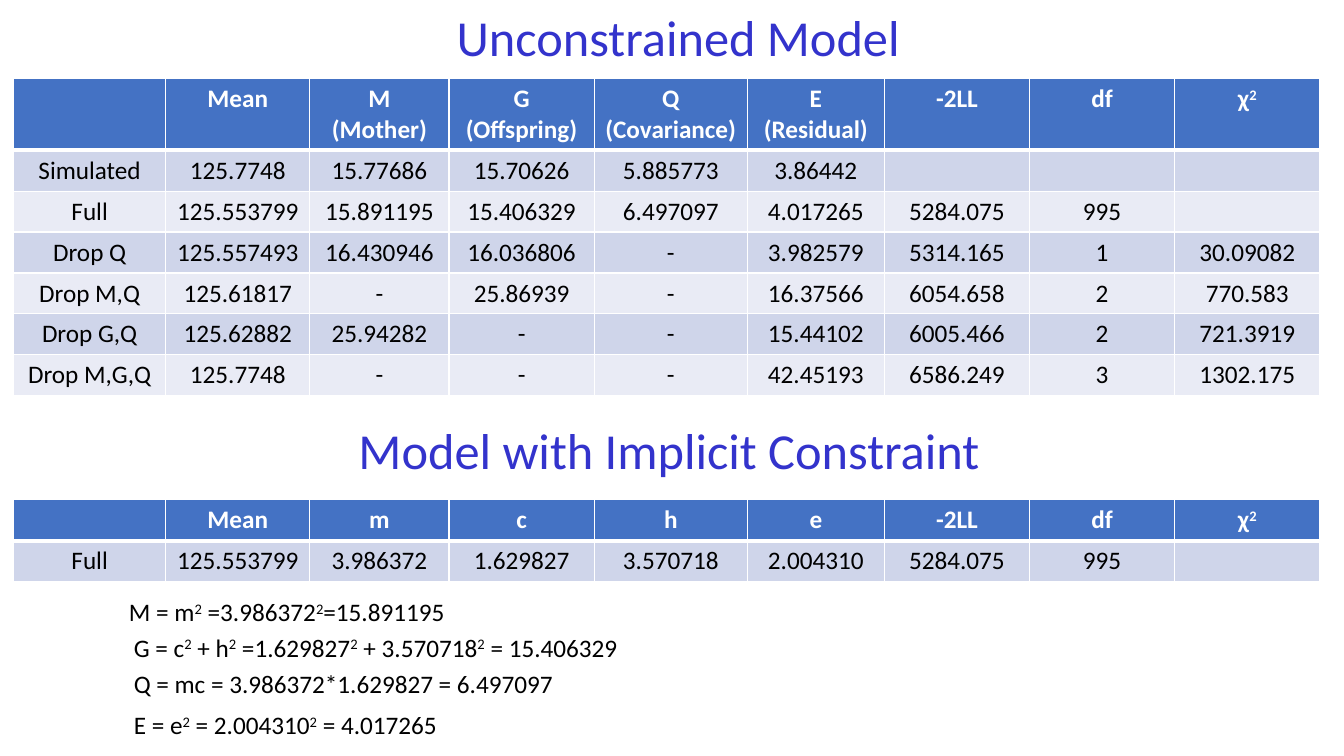
"""Build a slide comparing an unconstrained model with an implicitly constrained one."""
from dataclasses import dataclass

from lxml import etree
from pptx import Presentation
from pptx.dml.color import RGBColor
from pptx.enum.text import MSO_ANCHOR, MSO_AUTO_SIZE, PP_ALIGN
from pptx.oxml.ns import qn
from pptx.util import Pt

LEFT, CENTER = PP_ALIGN.LEFT, PP_ALIGN.CENTER
TOP = MSO_ANCHOR.TOP
NO_FIT = MSO_AUTO_SIZE.NONE
TITLE_ONLY = 5


@dataclass(frozen=True)
class Theme:
    font: str = "Calibri"
    title_size: float = 36
    text_size: float = 18
    title: str = "3333CC"
    text: str = "000000"
    header_text: str = "FFFFFF"
    header_fill: str = "4472C4"
    bands: tuple = ("CFD5EA", "E9EBF5")
    border: str = "FFFFFF"
    thin: float = 1
    thick: float = 3


class Page:
    def __init__(self, deck, theme):
        self.theme = theme
        self.slide = deck.slides.add_slide(deck.slide_layouts[TITLE_ONLY])

    def fill_text(self, frame, text, size, color, align=LEFT, bold=False):
        for index, line in enumerate(text.split("\n")):
            para = frame.add_paragraph() if index else frame.paragraphs[0]
            para.alignment = align
            font = para.font
            font.name, font.size, font.bold = self.theme.font, Pt(size), bold
            font.color.rgb = RGBColor.from_string(color)
            for position, piece in enumerate(line.split("²")):
                if position:
                    power = para.add_run()
                    power.text = "2"
                    power.font._element.set("baseline", "30000")
                if piece:
                    para.add_run().text = piece

    def place(self, box, left, top, width, height, wrap):
        box.left, box.top, box.width, box.height = map(Pt, (left, top, width, height))
        frame = box.text_frame
        frame.word_wrap = wrap
        frame.auto_size = NO_FIT
        frame.vertical_anchor = TOP
        return frame

    def add_box(self):
        return self.slide.shapes.add_textbox(0, 0, 0, 0)

    def heading(self, box, text, left, top, width):
        frame = self.place(box, left, top, width, 51, False)
        self.fill_text(frame, text, self.theme.title_size, self.theme.title)

    def formula(self, text, left, top):
        frame = self.place(self.add_box(), left, top, 602, 29, True)
        self.fill_text(frame, text, self.theme.text_size, self.theme.text)

    def border(self, cell, side, width):
        properties = cell._tc.get_or_add_tcPr()
        line = etree.SubElement(properties, qn(f"a:ln{side}"), w=str(Pt(width)))
        fill = etree.SubElement(line, qn("a:solidFill"))
        etree.SubElement(fill, qn("a:srgbClr"), val=self.theme.border)

    def table(self, rows, left, top, widths, header_height, row_height):
        theme = self.theme
        height = header_height + row_height * (len(rows) - 1)
        table = self.slide.shapes.add_table(
            len(rows), len(widths), Pt(left), Pt(top), Pt(sum(widths)), Pt(height)).table
        for column, width in zip(table.columns, widths):
            column.width = Pt(width)
        for row_index, values in enumerate(rows):
            header = row_index == 0
            table.rows[row_index].height = Pt(header_height if header else row_height)
            fill = theme.header_fill if header else theme.bands[(row_index - 1) % 2]
            color = theme.header_text if header else theme.text
            top_width = theme.thick if row_index == 1 else theme.thin
            bottom_width = theme.thick if header else theme.thin
            sides = {"L": theme.thin, "R": theme.thin, "T": top_width, "B": bottom_width}
            for column_index, value in enumerate(values):
                cell = table.cell(row_index, column_index)
                for side, width in sides.items():
                    self.border(cell, side, width)
                cell.fill.solid()
                cell.fill.fore_color.rgb = RGBColor.from_string(fill)
                self.fill_text(cell.text_frame, value, theme.text_size, color, CENTER, header)


COLUMN_WIDTHS = [108.7, 103, 99.4, 103.7, 109.4, 97.9, 103.7, 103.7, 103.7]
TABLE_LEFT = 9.7
ROW_HEIGHT = 29.2

UNCONSTRAINED = [
    ["", "Mean", "M\n(Mother)", "G\n(Offspring)", "Q\n(Covariance)", "E\n(Residual)",
     "-2LL", "df", "χ²"],
    ["Simulated", "125.7748", "15.77686", "15.70626", "5.885773", "3.86442", "", "", ""],
    ["Full", "125.553799", "15.891195", "15.406329", "6.497097", "4.017265",
     "5284.075", "995", ""],
    ["Drop Q", "125.557493", "16.430946", "16.036806", "-", "3.982579",
     "5314.165", "1", "30.09082"],
    ["Drop M,Q", "125.61817", "-", "25.86939", "-", "16.37566", "6054.658", "2", "770.583"],
    ["Drop G,Q", "125.62882", "25.94282", "-", "-", "15.44102", "6005.466", "2", "721.3919"],
    ["Drop M,G,Q", "125.7748", "-", "-", "-", "42.45193", "6586.249", "3", "1302.175"],
]
CONSTRAINED = [
    ["", "Mean", "m", "c", "h", "e", "-2LL", "df", "χ²"],
    ["Full", "125.553799", "3.986372", "1.629827", "3.570718", "2.004310",
     "5284.075", "995", ""],
]
FORMULAS = [
    ("M = m² =3.986372²=15.891195", 85, 422.6),
    ("G = c² + h² =1.629827² + 3.570718² = 15.406329", 88.5, 448),
    ("Q = mc = 3.986372*1.629827 = 6.497097", 88.5, 474),
    ("E = e² = 2.004310² = 4.017265", 88.5, 503.3),
]


def main():
    deck = Presentation()
    deck.slide_width, deck.slide_height = Pt(960), Pt(540)
    page = Page(deck, Theme())
    page.heading(page.slide.shapes.title, "Unconstrained Model", 319, 0.7, 334)
    page.table(UNCONSTRAINED, TABLE_LEFT, 56.2, COLUMN_WIDTHS, 51, ROW_HEIGHT)
    page.heading(page.add_box(), "Model with Implicit Constraint", 249, 296, 462)
    page.table(CONSTRAINED, TABLE_LEFT, 357, COLUMN_WIDTHS, ROW_HEIGHT, ROW_HEIGHT)
    for text, left, top in FORMULAS:
        page.formula(text, left, top)
    deck.save("out.pptx")


if __name__ == "__main__":
    main()
